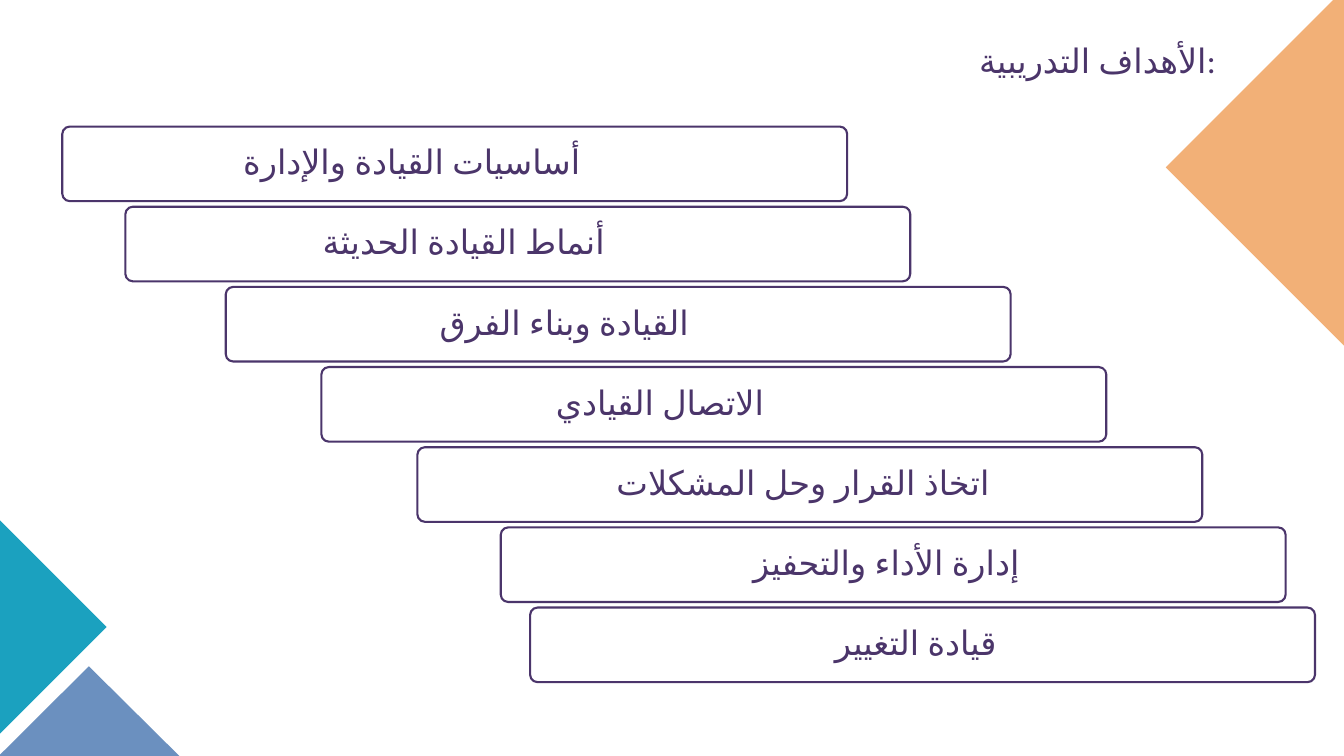
import pptx
import pptx.dml.color
import pptx.enum.lang
import pptx.enum.shapes
import pptx.enum.text
import pptx.util
from pptx.util import Cm

FONT = "Calibri"
PURPLE = "4B356A"
BAR_WIDTH, BAR_HEIGHT = 19.78, 1.88
FIRST_TOP, STEP = 3.19, 2.02
GOALS = [
    (1.57, 2.39, "أساسيات القيادة والإدارة"),
    (3.16, 2.95, "أنماط القيادة الحديثة"),
    (5.69, 2.95, "القيادة وبناء الفرق"),
    (8.1, 2.95, "الاتصال القيادي"),
    (10.52, 0.57, "اتخاذ القرار وحل المشكلات"),
    (12.62, 0.57, "إدارة الأداء والتحفيز"),
    (13.36, 0.57, "قيادة التغيير"),
]
CORNERS = [
    ("1BA1BF", [(0, 13.11), (2.69, 15.8), (0, 18.49)]),
    ("6B90BF", [(2.24, 16.79), (4.52, 19.05), (0, 19.05), (0, 19.02)]),
    ("F2B077", [(33.6, 0), (33.87, 0), (33.87, 8.71), (29.38, 4.22)]),
]


def colour(value):
    """Turn a hex string into a colour."""
    return pptx.dml.color.RGBColor.from_string(value)


def write(shape, text, align, rtl=False):
    """Put one formatted Arabic line into a shape."""
    frame = shape.text_frame
    frame.word_wrap = True
    frame.vertical_anchor = pptx.enum.text.MSO_ANCHOR.MIDDLE
    frame.text = text
    para = frame.paragraphs[0]
    para.alignment = align
    para.line_spacing = 0.9
    if rtl:
        para._p.get_or_add_pPr().set("rtl", "1")
    span = para.runs[0]
    span.font.size = pptx.util.Pt(24)
    span.font.name = FONT
    span.font.color.rgb = colour(PURPLE)
    span.font.language_id = pptx.enum.lang.MSO_LANGUAGE_ID.ARABIC


def add_corner(page, fill, points):
    """Draw a plain coloured polygon at the edge of the page."""
    start, *rest = [(Cm(x), Cm(y)) for x, y in points]
    builder = page.shapes.build_freeform(*start)
    builder.add_line_segments(rest, close=True)
    corner = builder.convert_to_shape()
    corner.shadow.inherit = False
    corner.fill.solid()
    corner.fill.fore_color.rgb = colour(fill)
    corner.line.fill.background()


def add_title(page, text):
    """Write the heading, aligned to the right."""
    box = page.shapes.add_textbox(Cm(0), Cm(0.79), Cm(30.89), Cm(1.6))
    write(box, text, pptx.enum.text.PP_ALIGN.RIGHT)


def add_goal(page, left, top, right_inset, text):
    """Draw one outlined bar with its goal."""
    bar = page.shapes.add_shape(
        pptx.enum.shapes.MSO_SHAPE.ROUNDED_RECTANGLE,
        Cm(left), Cm(top), Cm(BAR_WIDTH), Cm(BAR_HEIGHT))
    bar.adjustments[0] = 0.1
    bar.shadow.inherit = False
    bar.fill.solid()
    bar.fill.fore_color.rgb = colour("FFFFFF")
    bar.line.color.rgb = colour("4B356B")
    bar.line.width = pptx.util.Pt(1.5)
    frame = bar.text_frame
    frame.margin_left = Cm(0.23)
    frame.margin_right = Cm(right_inset)
    frame.margin_top = frame.margin_bottom = Cm(0.18)
    write(bar, text, pptx.enum.text.PP_ALIGN.CENTER, rtl=True)


def main():
    """Build the slide of training goals."""
    deck = pptx.Presentation()
    deck.slide_width, deck.slide_height = Cm(33.87), Cm(19.05)
    page = deck.slides.add_slide(deck.slide_layouts[6])
    for fill, points in CORNERS:
        add_corner(page, fill, points)
    add_title(page, "الأهداف التدريبية:")
    for index, (left, right_inset, text) in enumerate(GOALS):
        add_goal(page, left, FIRST_TOP + index * STEP, right_inset, text)
    deck.save("out.pptx")


if __name__ == "__main__":
    main()
